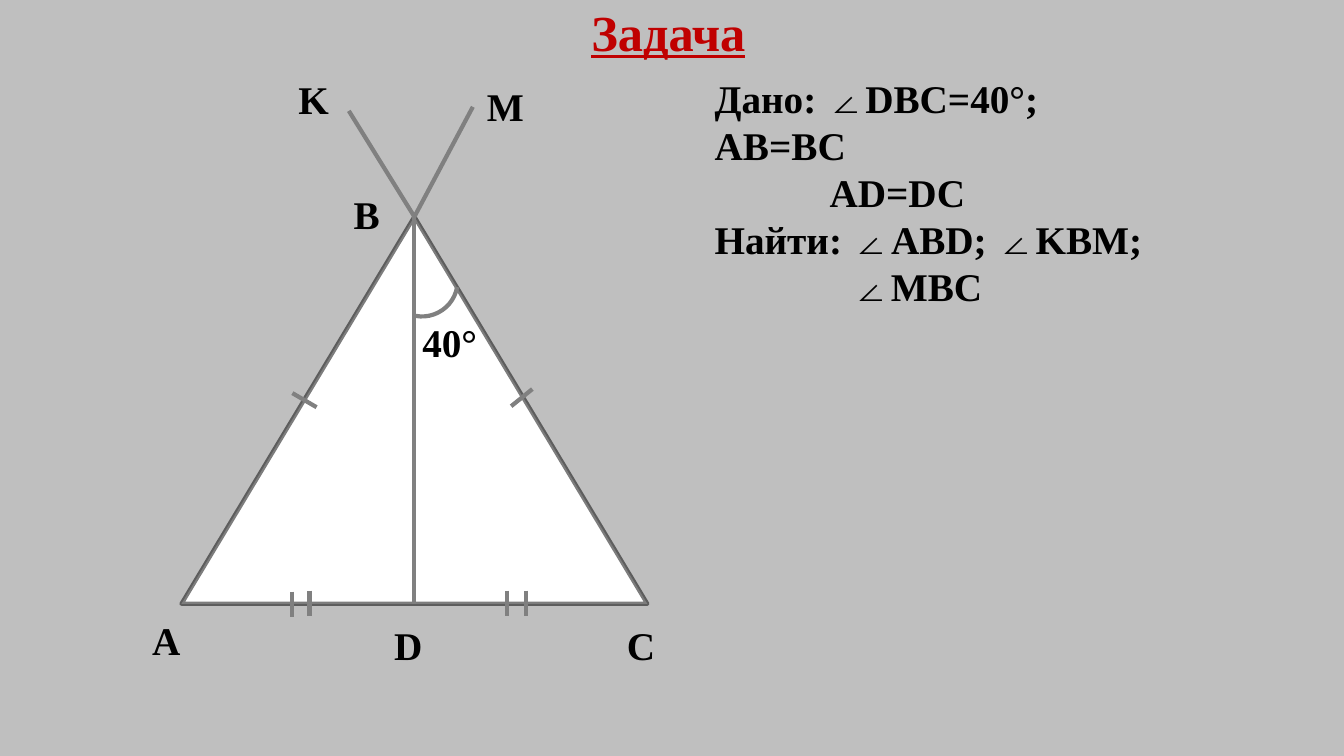
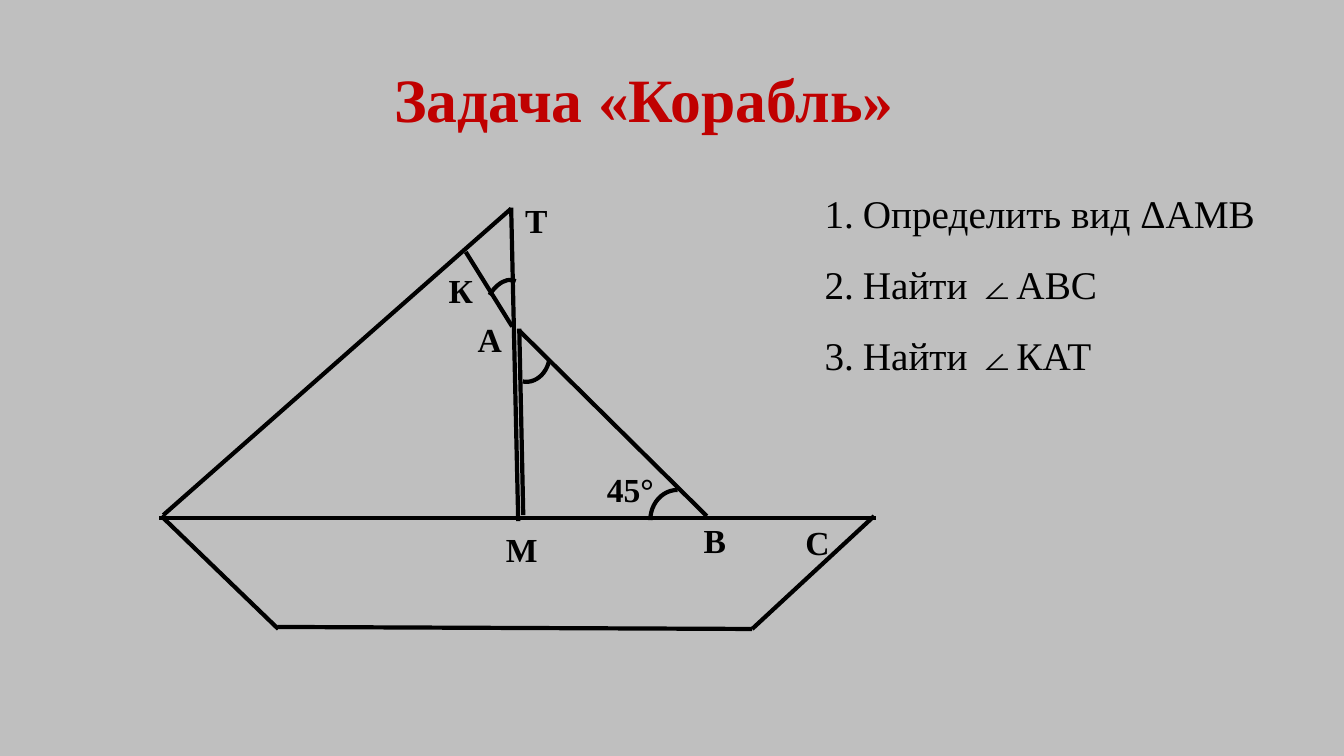
from typing import NamedTuple

import pptx
import pptx.dml.color
import pptx.enum.lang
import pptx.enum.shapes
import pptx.enum.text
import pptx.oxml
import pptx.oxml.ns
import pptx.util
from pptx.util import Inches

FONT = "Times New Roman"
BACK, RED, BLACK, GRAY, WHITE = "BFBFBF", "C00000", "000000", "808080", "FFFFFF"
SHAPE = pptx.enum.shapes.MSO_SHAPE
LANG = pptx.enum.lang.MSO_LANGUAGE_ID
NS = pptx.oxml.ns.nsdecls("a")


class Line(NamedTuple):
    x1: float
    y1: float
    x2: float
    y2: float


class Label(NamedTuple):
    text: str
    x: float
    y: float
    w: float


class Arc(NamedTuple):
    x: float
    y: float
    w: float
    h: float
    turn: float


# Shared helpers
def color(code: str):
    return pptx.dml.color.RGBColor.from_string(code)


def style(part, size: float, code: str, bold: bool = True) -> None:
    for run in part.runs:
        font = run.font
        font.name, font.size, font.bold = FONT, pptx.util.Pt(size), bold
        font.color.rgb = color(code)
        latin = all(char < "А" for char in run.text)
        font.language_id = LANG.ENGLISH_US if latin else LANG.RUSSIAN


def stroke(shape, code: str) -> None:
    shape.line.color.rgb = color(code)
    shape.line.width = pptx.util.Pt(3)


def add_slide(deck, title: str, box: tuple, size: float, under: bool = False):
    slide = deck.slides.add_slide(deck.slide_layouts[5])
    head = slide.shapes.title
    head.left, head.top, head.width, head.height = map(Inches, box)
    frame = head.text_frame
    frame.text = title
    frame.auto_size = pptx.enum.text.MSO_AUTO_SIZE.NONE
    frame.vertical_anchor = pptx.enum.text.MSO_ANCHOR.MIDDLE
    part = frame.paragraphs[0]
    part.alignment = pptx.enum.text.PP_ALIGN.CENTER
    part.line_spacing = 0.9
    style(part, size, RED)
    if under:
        part.runs[0].font.underline = True
    return slide


def draw_line(shapes, line: Line, code: str) -> None:
    item = shapes.add_connector(
        pptx.enum.shapes.MSO_CONNECTOR.STRAIGHT, *map(Inches, line))
    stroke(item, code)
    item._element.spPr.append(pptx.oxml.parse_xml(f"<a:effectLst {NS}/>"))


def draw_arc(shapes, arc: Arc, code: str) -> None:
    item = shapes.add_shape(SHAPE.ARC, *map(Inches, arc[:4]))
    item.rotation = arc.turn
    item.shadow.inherit = False
    item.fill.background()
    stroke(item, code)


def draw_label(shapes, label: Label, size: float) -> None:
    box = shapes.add_textbox(
        Inches(label.x), Inches(label.y), Inches(label.w), Inches(size / 50))
    frame = box.text_frame
    frame.word_wrap = False
    frame.text = label.text
    style(frame.paragraphs[0], size, BLACK)


def draw_all(shapes, lines: list, arcs: list, labels: list,
             code: str, size: float) -> None:
    for line in lines:
        draw_line(shapes, line, code)
    for arc in arcs:
        draw_arc(shapes, arc, code)
    for label in labels:
        draw_label(shapes, label, size)


def add_text(shapes, rows: list, box: tuple, bold: bool):
    """Each row is a tuple of runs, split where the language changes."""
    frame = shapes.add_textbox(*map(Inches, box)).text_frame
    frame.word_wrap = True
    for i, row in enumerate(rows):
        part = frame.add_paragraph() if i else frame.paragraphs[0]
        for text in row:
            part.add_run().text = text
        style(part, 28, BLACK, bold)
    return frame.paragraphs


# Slide 1: triangle with a median
def add_median(deck) -> None:
    slide = add_slide(deck, "Задача", (0.88, 0, 11.5, 0.69), 36, True)
    shapes = slide.shapes
    body = shapes.add_shape(SHAPE.ISOSCELES_TRIANGLE, Inches(1.8),
                            Inches(2.15), Inches(4.62), Inches(3.84))
    body.shadow.inherit = False
    body.fill.solid()
    body.fill.fore_color.rgb = color(WHITE)
    stroke(body, BLACK)
    tint = body.line._ln.find(".//" + pptx.oxml.ns.qn("a:srgbClr"))
    tint.append(pptx.oxml.parse_xml(f'<a:alpha {NS} val="51000"/>'))

    top = (4.11, 2.15)
    rays = [Line(*top, *end) for end in ((4.11, 5.99), (4.69, 1.06), (3.46, 1.1))]
    sides = [Line(2.9, 3.9, 3.14, 4.04), Line(5.07, 4.03, 5.28, 3.86)]
    ticks = [Line(x, y, x, y + 0.25) for x, y in
             ((2.9, 5.87), (3.07, 5.86), (5.03, 5.86), (5.22, 5.86))]
    labels = [
        Label("A", 1.41, 6.07, 0.49), Label("D", 3.81, 6.11, 0.49),
        Label("C", 6.12, 6.11, 0.49), Label("B", 3.41, 1.84, 0.46),
        Label("K", 2.86, 0.7, 0.51), Label("M", 4.73, 0.77, 0.57),
        Label("40°", 4.09, 3.11, 0.75),
    ]
    draw_all(shapes, rays + sides + ticks,
             [Arc(3.83, 2.43, 0.71, 0.71, 100.3)], labels, GRAY, 28)

    # Given and sought
    rows = [("Дано: ", "∠", "DBC=40°; AB=BC"), ("AD=DC",),
            ("Найти: ", "∠", "ABD; ", "∠", "KBM;"), ("∠", "MBC")]
    parts = add_text(shapes, rows, (6.99, 0.69, 4.6, 2.46), True)
    for part, left in ((parts[1], 1.14), (parts[3], 1.36)):
        part._p.get_or_add_pPr().set("marL", str(Inches(left)))


# Slide 2: ship
def add_ship(deck) -> None:
    slide = add_slide(deck, "Задача «Корабль»", (0.64, 0.29, 11.5, 1.45), 44)
    hull = [
        Line(2.75, 6.22, 7.46, 6.24), Line(7.46, 6.24, 8.67, 5.12),
        Line(2.76, 6.24, 1.6, 5.12), Line(1.58, 5.14, 8.69, 5.14),
    ]
    sails = [
        Line(1.62, 5.11, 5.07, 2.07), Line(5.07, 2.06, 5.14, 5.17),
        Line(5.19, 5.11, 5.15, 3.26), Line(5.15, 3.28, 7.01, 5.12),
        Line(5.08, 3.24, 4.62, 2.5),
    ]
    arcs = [
        Arc(6.42, 4.89, 0.6, 0.54, 270), Arc(4.98, 3.32, 0.51, 0.43, 101.2),
        Arc(4.74, 2.85, 0.5, 0.31, 300.3),
    ]
    labels = [
        Label("С", 7.89, 5.13, 0.45), Label("В", 6.88, 5.11, 0.43),
        Label("М", 4.92, 5.2, 0.52), Label("А", 4.64, 3.11, 0.44),
        Label("К", 4.35, 2.63, 0.45), Label("Т", 5.11, 1.93, 0.38),
        Label("45°", 5.92, 4.6, 0.67),
    ]
    group = slide.shapes.add_group_shape()
    draw_all(group.shapes, hull + sails, arcs, labels, BLACK, 24)

    # Numbered tasks
    rows = [("Определить вид ΔАМВ",), ("Найти ∠АВС",), ("Найти ∠КАТ",)]
    for part in add_text(slide.shapes, rows, (8.08, 1.6, 5.25, 2.22), False):
        props = part._p.get_or_add_pPr()
        props.set("marL", str(Inches(0.38)))
        props.set("indent", str(Inches(-0.38)))
        props.append(pptx.oxml.parse_xml(
            f'<a:buAutoNum {NS} type="arabicPeriod"/>'))
        part.line_spacing = 1.5


def main() -> None:
    deck = pptx.Presentation()
    deck.slide_width, deck.slide_height = Inches(13.33), Inches(7.5)
    fill = deck.slide_master.background.fill
    fill.solid()
    fill.fore_color.rgb = color(BACK)
    add_median(deck)
    add_ship(deck)
    deck.save("out.pptx")


if __name__ == "__main__":
    main()
